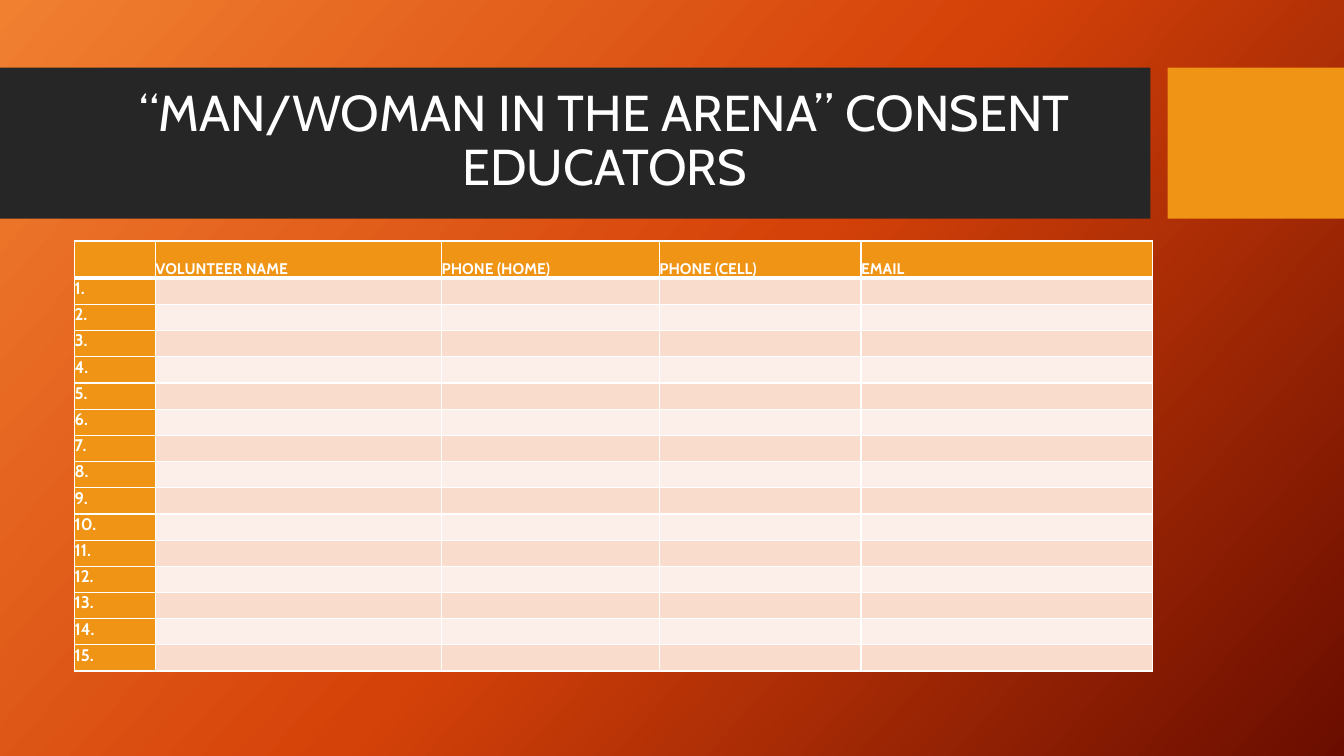
from lxml.etree import SubElement
from copy import deepcopy
from pptx import Presentation
from pptx.dml.color import RGBColor
from pptx.enum.shapes import MSO_SHAPE
from pptx.enum.text import MSO_ANCHOR, PP_ALIGN
from pptx.oxml.ns import qn
from pptx.util import Inches, Pt

FONT = "Cabin"
WHITE, ORANGE, CHARCOAL = "FFFFFF", "F09415", "262626"
BAND_COLORS = ["FCEEE8", "F9DCCC"]
HEADINGS = ["", "VOLUNTEER NAME", "PHONE (HOME)", "PHONE (CELL)", "EMAIL"]
COLUMN_WIDTHS = [0.8, 2.84, 2.16, 2, 2.89]
HEADER_HEIGHT, ROW_HEIGHT, VOLUNTEERS = 0.37, 0.26, 15


def color(hex_string):
    return RGBColor.from_string(hex_string)


def add_span(para, text, size, bold=False):
    span = para.add_run()
    span.text = text
    span.font.name = FONT
    span.font.size = Pt(size)
    span.font.bold = bold
    span.font.color.rgb = color(WHITE)


deck = Presentation()
deck.slide_width, deck.slide_height = Inches(13.33), Inches(7.5)
page = deck.slides.add_slide(deck.slide_layouts[5])

# Background gradient with three stops
background = page.background.fill
background.gradient()
background.gradient_angle = 360 - 42
stop_list = page._element.find(".//" + qn("a:gsLst"))
stop_list.append(deepcopy(stop_list[-1]))
stops = [(0, "F18031"), (0.5, "D54209"), (1, "6A0D00")]
for stop, (position, shade) in zip(background.gradient_stops, stops):
    stop.position = position
    stop.color.rgb = color(shade)

# Title band and accent block
for left, width, fill in [(0, 11.41, CHARCOAL), (11.58, 1.75, ORANGE)]:
    band = page.shapes.add_shape(MSO_SHAPE.RECTANGLE, Inches(left), Inches(0.67),
                                 Inches(width), Inches(1.5))
    band.shadow.inherit = False
    band.fill.solid()
    band.fill.fore_color.rgb = color(fill)
    band.line.fill.background()

# Title, brought in front of its band
title = page.shapes.title
title.left, title.top = Inches(0.74), Inches(0.82)
title.width, title.height = Inches(10.51), Inches(1.18)
page.shapes._spTree.append(title._element)
title.text_frame.word_wrap = True
title.text_frame.vertical_anchor = MSO_ANCHOR.MIDDLE
title_para = title.text_frame.paragraphs[0]
title_para.alignment = PP_ALIGN.CENTER
title_para.line_spacing = 0.9
add_span(title_para, "“MAN/WOMAN IN THE ARENA” CONSENT EDUCATORS", 36)

# Sign-up table
table = page.shapes.add_table(
    VOLUNTEERS + 1, len(HEADINGS), Inches(0.74), Inches(2.39),
    Inches(sum(COLUMN_WIDTHS)), Inches(HEADER_HEIGHT + VOLUNTEERS * ROW_HEIGHT)).table
table.first_col = True
for column, width in zip(table.columns, COLUMN_WIDTHS):
    column.width = Inches(width)

for row_index, row in enumerate(table.rows):
    is_header = row_index == 0
    row.height = Inches(HEADER_HEIGHT if is_header else ROW_HEIGHT)
    for column_index, cell in enumerate(row.cells):
        cell.margin_left = cell.margin_bottom = 0
        cell.margin_right = Inches(0.05)
        cell.margin_top = Inches(0.1 if is_header else 0)
        cell.vertical_anchor = MSO_ANCHOR.BOTTOM if is_header else MSO_ANCHOR.TOP

        # White borders, heavier under the header
        for side in ["L", "R", "T", "B"]:
            heavy = (row_index, side) in [(0, "B"), (1, "T")]
            border = SubElement(cell._tc.get_or_add_tcPr(), qn("a:ln" + side),
                                w=str(Pt(3 if heavy else 1)))
            SubElement(SubElement(border, qn("a:solidFill")), qn("a:srgbClr"), val=WHITE)

        cell.fill.solid()
        is_label = is_header or column_index == 0
        cell.fill.fore_color.rgb = color(ORANGE if is_label else BAND_COLORS[row_index % 2])

        para = cell.text_frame.paragraphs[0]
        if is_header and HEADINGS[column_index]:
            add_span(para, HEADINGS[column_index], 11, bold=True)
        elif is_label and not is_header:
            add_span(para, f"{row_index}.", 12, bold=True)
        else:
            # Small type keeps blank cells from stretching the row
            SubElement(para._p, qn("a:endParaRPr"), sz="1100")

deck.save("out.pptx")
